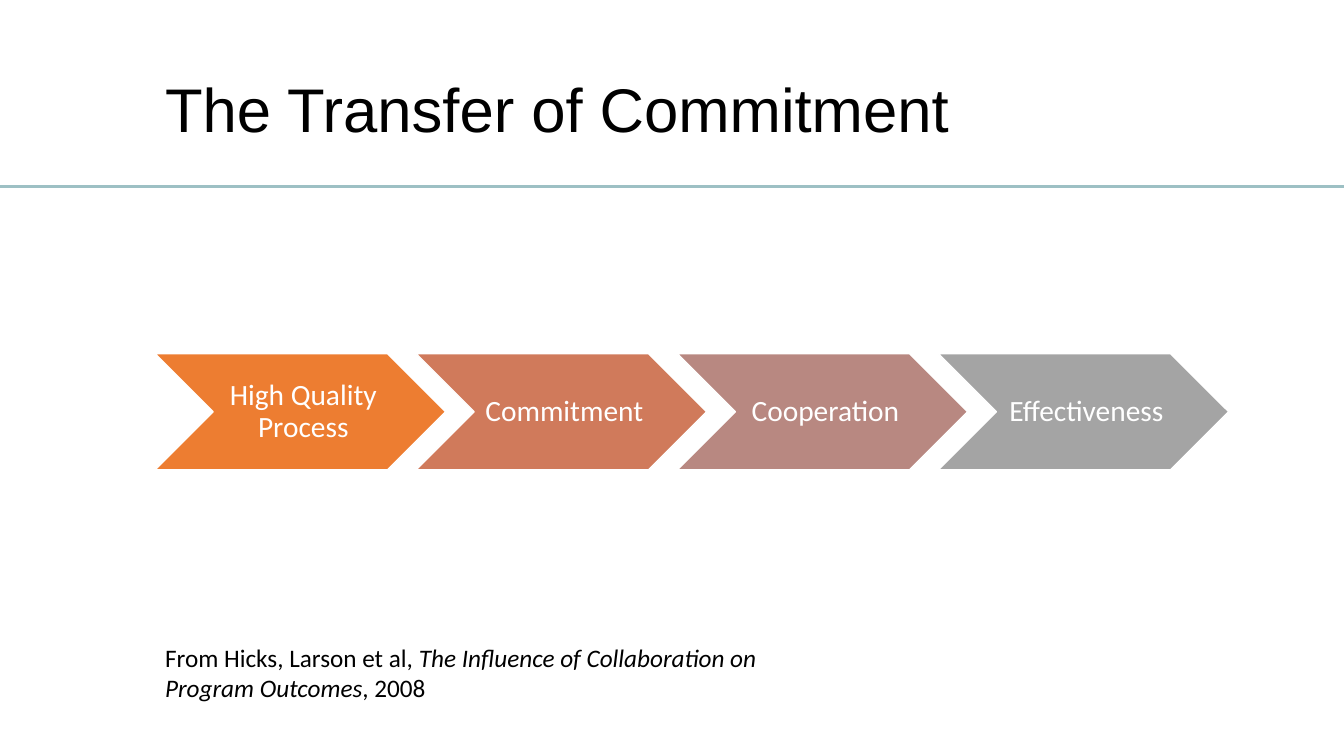
from dataclasses import dataclass

import pptx
import pptx.dml.color
import pptx.enum.shapes
import pptx.enum.text
import pptx.util
from lxml import etree

Pt = pptx.util.Pt
RGBColor = pptx.dml.color.RGBColor
Anchor = pptx.enum.text.MSO_ANCHOR
Alignment = pptx.enum.text.PP_ALIGN


@dataclass(frozen=True)
class Theme:
    ink: str = "000000"
    paper: str = "FFFFFF"
    rule: str = "9DC0C4"
    title_font: str = "Arial"
    body_font: str = "Calibri"
    title_size: float = 44
    step_size: float = 21
    source_size: float = 18


@dataclass(frozen=True)
class Step:
    label: str
    fill: str


@dataclass(frozen=True)
class Phrase:
    text: str
    italic: bool = False


THEME = Theme()
SLIDE_WIDTH, SLIDE_HEIGHT = 960, 540
LEFT = 110.88
RULE_TOP = 133.2
STEP_TOP, STEP_WIDTH, STEP_HEIGHT = 252.72, 207.36, 82.8
STEP_PITCH = 186.48

STEPS = [
    Step("High Quality Process", "ED7D31"),
    Step("Commitment", "D07A5B"),
    Step("Cooperation", "B88881"),
    Step("Effectiveness", "A4A4A4"),
]
SOURCE = [
    Phrase("From Hicks, Larson et al, "),
    Phrase("The Influence of Collaboration on Program Outcomes", italic=True),
    Phrase(", 2008"),
]


def format_run(run, font: str, size: float, color: str) -> None:
    run.font.name = font
    run.font.size = Pt(size)
    run.font.color.rgb = RGBColor.from_string(color)


def add_text_box(slide, top: float, width: float, height: float):
    """Add a wrapping text box on the slide's left margin and return its frame."""
    box = slide.shapes.add_textbox(Pt(LEFT), Pt(top), Pt(width), Pt(height))
    box.text_frame.word_wrap = True
    return box.text_frame


def add_title(slide, text: str) -> None:
    frame = add_text_box(slide, 28.8, 783.36, 103.68)
    frame.vertical_anchor = Anchor.MIDDLE
    paragraph = frame.paragraphs[0]
    paragraph.text = text
    paragraph.line_spacing = 0.9
    format_run(paragraph.runs[0], THEME.title_font, THEME.title_size, THEME.ink)


def add_rule(slide) -> None:
    rule = slide.shapes.add_connector(
        pptx.enum.shapes.MSO_CONNECTOR.STRAIGHT,
        Pt(0), Pt(RULE_TOP), Pt(SLIDE_WIDTH), Pt(RULE_TOP),
    )
    rule.line.color.rgb = RGBColor.from_string(THEME.rule)
    rule.line.width = Pt(2)
    etree.SubElement(rule._element.spPr, pptx.oxml.ns.qn("a:effectLst"))


def add_step(slide, step: Step, left: float) -> None:
    chevron = slide.shapes.add_shape(
        pptx.enum.shapes.MSO_SHAPE.CHEVRON,
        Pt(left), Pt(STEP_TOP), Pt(STEP_WIDTH), Pt(STEP_HEIGHT),
    )
    chevron.shadow.inherit = False
    chevron.fill.solid()
    chevron.fill.fore_color.rgb = RGBColor.from_string(step.fill)
    chevron.line.color.rgb = RGBColor.from_string(THEME.paper)
    chevron.line.width = Pt(1)

    frame = chevron.text_frame
    frame.word_wrap = True
    frame.vertical_anchor = Anchor.MIDDLE
    frame.margin_left = Pt(6.3)
    frame.margin_right = frame.margin_top = frame.margin_bottom = Pt(2.1)
    paragraph = frame.paragraphs[0]
    paragraph.text = step.label
    paragraph.alignment = Alignment.CENTER
    paragraph.line_spacing = 0.9
    format_run(paragraph.runs[0], THEME.body_font, THEME.step_size, THEME.paper)


def add_source(slide, phrases: list[Phrase]) -> None:
    paragraph = add_text_box(slide, 455.04, 480.24, 51.12).paragraphs[0]
    for phrase in phrases:
        run = paragraph.add_run()
        run.text = phrase.text
        format_run(run, THEME.body_font, THEME.source_size, THEME.ink)
        run.font.italic = phrase.italic


def main() -> None:
    presentation = pptx.Presentation()
    presentation.slide_width = Pt(SLIDE_WIDTH)
    presentation.slide_height = Pt(SLIDE_HEIGHT)
    slide = presentation.slides.add_slide(presentation.slide_layouts[6])

    add_rule(slide)
    for index, step in enumerate(STEPS):
        add_step(slide, step, LEFT + index * STEP_PITCH)
    add_title(slide, "The Transfer of Commitment")
    add_source(slide, SOURCE)

    presentation.save("out.pptx")


if __name__ == "__main__":
    main()
